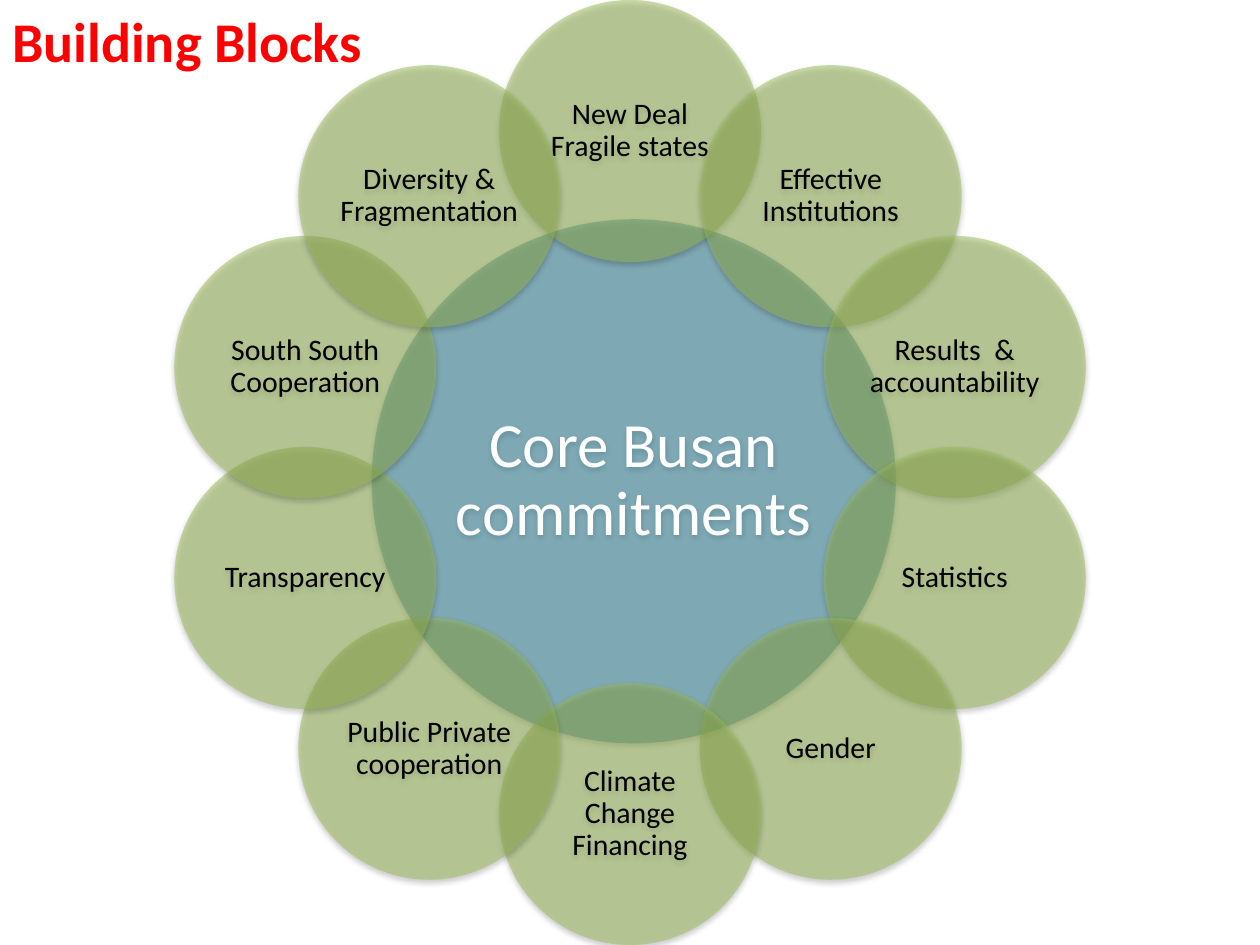
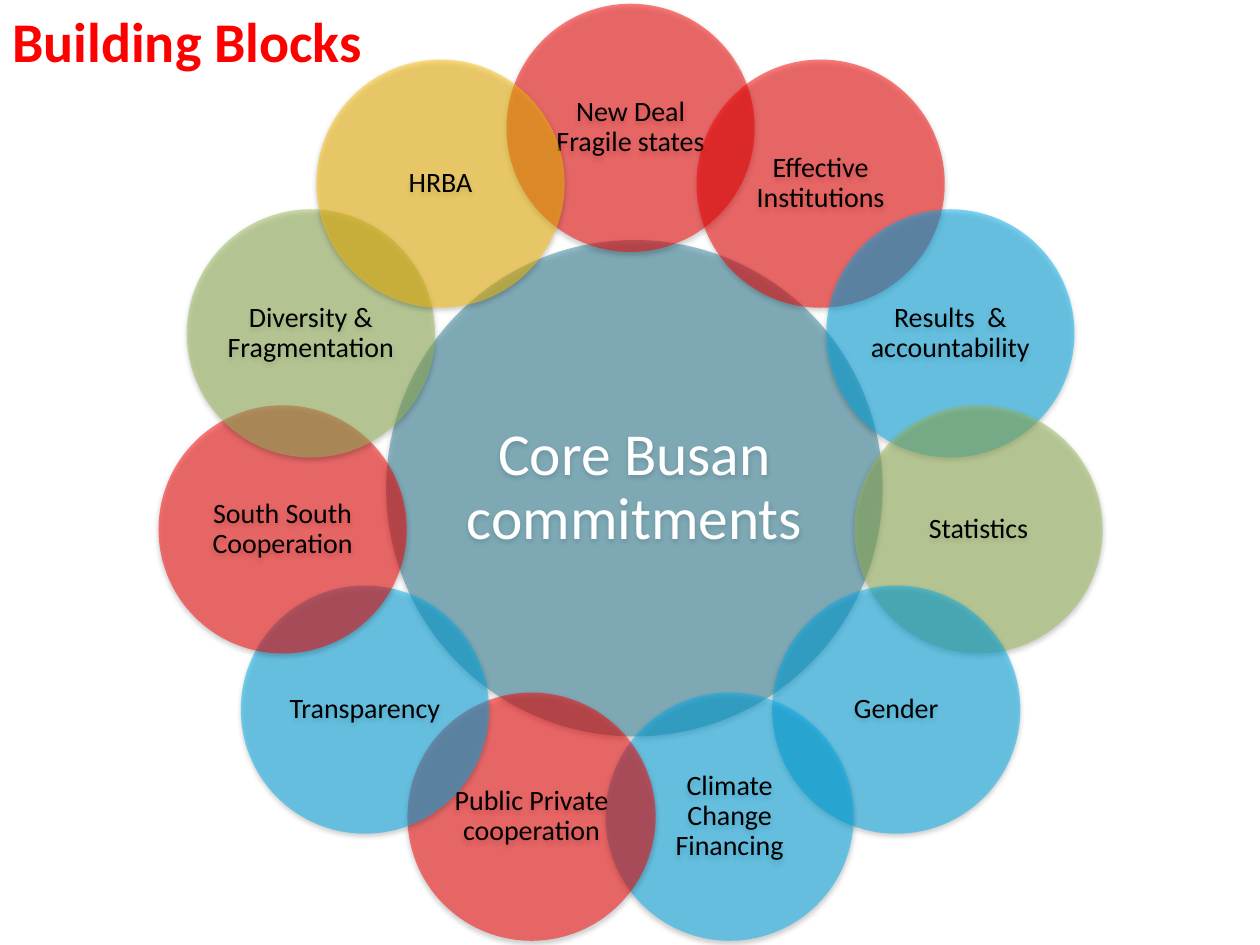
from dataclasses import dataclass
from math import cos, pi, sin

from lxml.etree import SubElement
from pptx import Presentation
from pptx.dml.color import RGBColor
from pptx.enum.shapes import MSO_SHAPE
from pptx.enum.text import MSO_ANCHOR, PP_ALIGN
from pptx.oxml.ns import qn
from pptx.util import Inches, Pt


@dataclass(frozen=True)
class Theme:
    font: str = "Calibri"
    title_size: int = 32
    red: str = "FF0000"
    blue: str = "00B0F0"
    green: str = "9BBB59"
    amber: str = "FFC000"
    teal: str = "31859C"
    white: str = "FFFFFF"
    black: str = "000000"


T = Theme()
CORE_TEXT = "Core Busan commitments"
CORE_SHIFT = (0.03, 0.07)  # the core sits slightly off the ring's centre

# Petals run clockwise from the top
PLAIN_PETALS = [(label, T.green) for label in (
    "New Deal Fragile states", "Effective Institutions",
    "Results  & accountability", "Statistics", "Gender",
    "Climate Change Financing", "Public Private cooperation",
    "Transparency", "South South Cooperation", "Diversity & Fragmentation",
)]
PETAL_COLORS = [T.red, T.red, T.blue, T.green, T.blue, T.blue,
                T.red, T.blue, T.red, T.green]
COLORED_PETALS = [(label, color) for (label, _), color
                  in zip(PLAIN_PETALS, PETAL_COLORS)] + [("HRBA", T.amber)]


def add_run(p, text, size, color, bold=False):
    r = p.add_run()
    r.text = text
    r.font.name = T.font
    r.font.size = Pt(size)
    r.font.bold = bold
    r.font.color.rgb = RGBColor.from_string(color)


def soften(sp):
    """Give a solid shape a half-transparent fill and a soft drop shadow."""
    color = sp._element.spPr.find(qn("a:solidFill"))[0]
    SubElement(color, qn("a:alpha"), val="50000")
    sp.shadow.inherit = False
    effects = sp._element.spPr.find(qn("a:effectLst"))
    shadow = SubElement(effects, qn("a:outerShdw"), blurRad="40000",
                        dist="20000", dir="5400000", rotWithShape="0")
    black = SubElement(shadow, qn("a:srgbClr"), val=T.black)
    SubElement(black, qn("a:alpha"), val="38000")


def add_disc(shapes, cx, cy, diameter, fill, text, size, color, inset):
    """Add a labelled translucent circle around a centre point."""
    sp = shapes.add_shape(MSO_SHAPE.OVAL, Inches(cx - diameter / 2),
                          Inches(cy - diameter / 2),
                          Inches(diameter), Inches(diameter))
    sp.fill.solid()
    sp.fill.fore_color.rgb = RGBColor.from_string(fill)
    sp.line.fill.background()
    soften(sp)
    tf = sp.text_frame
    tf.word_wrap = True
    tf.vertical_anchor = MSO_ANCHOR.MIDDLE
    tf.margin_left = tf.margin_right = Inches(inset)
    tf.margin_top = tf.margin_bottom = Inches(inset)
    p = tf.paragraphs[0]
    p.alignment = PP_ALIGN.CENTER
    p.line_spacing = 0.9
    add_run(p, text, size, color)


def add_title(s, box, text):
    tf = s.shapes.add_textbox(*map(Inches, box)).text_frame
    tf.word_wrap = True
    add_run(tf.paragraphs[0], text, T.title_size, T.red, bold=True)


def add_wheel(s, box, petal, petals, core_size, petal_size):
    """Fill a square box (left, top, side) with a core and a ring of petals."""
    left, top, side = box
    cx, cy = left + side / 2, top + side / 2
    radius = (side - petal) / 2
    shapes = s.shapes.add_group_shape().shapes

    # Core
    dx, dy = CORE_SHIFT
    add_disc(shapes, cx + dx, cy + dy, 2 * petal, T.teal,
             CORE_TEXT, core_size, T.white, 0.05)

    # Ring of petals
    for i, (label, fill) in enumerate(petals):
        angle = 2 * pi * i / len(petals)
        add_disc(shapes, cx + radius * sin(angle), cy - radius * cos(angle),
                 petal, fill, label, petal_size, T.black, 0.02)


def add_wheel_slide(prs, **wheel):
    s = prs.slides.add_slide(prs.slide_layouts[6])
    add_wheel(s, **wheel)
    add_title(s, (0, 0, 3.27, 1.25), "Building Blocks")


def main():
    prs = Presentation()
    prs.slide_width, prs.slide_height = Inches(10), Inches(7.5)
    add_wheel_slide(prs, box=(1.25, 0, 7.5), petal=2.08,
                    petals=PLAIN_PETALS, core_size=36, petal_size=17)
    add_wheel_slide(prs, box=(1.23, 0.03, 7.55), petal=1.97,
                    petals=COLORED_PETALS, core_size=34, petal_size=16)
    prs.save("out.pptx")


if __name__ == "__main__":
    main()
